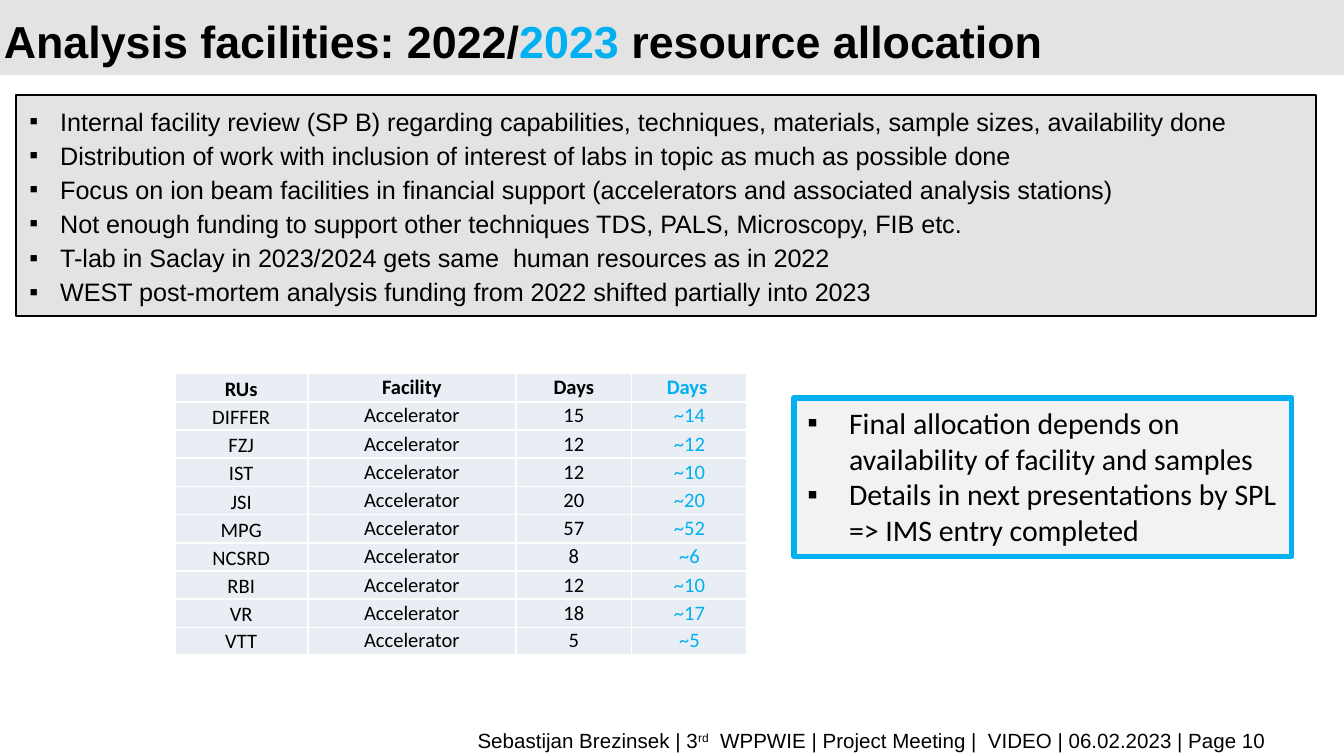
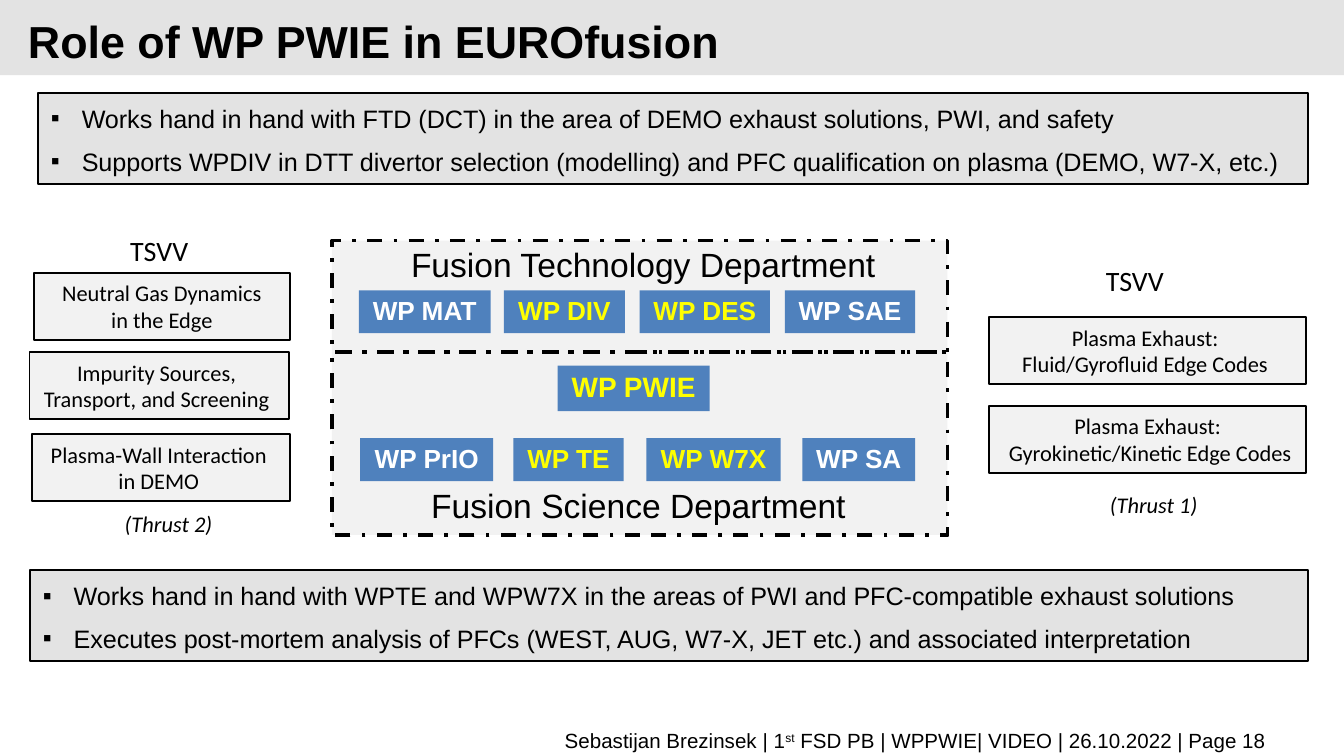
from dataclasses import dataclass
from lxml.etree import SubElement as Sub
from pptx import Presentation
from pptx.dml.color import RGBColor as RGB
from pptx.enum.dml import MSO_LINE as Dash
from pptx.enum.shapes import MSO_SHAPE as Kind
from pptx.enum.text import MSO_ANCHOR as Anchor, MSO_AUTO_SIZE as Auto, PP_ALIGN as Align
from pptx.oxml.ns import qn
from pptx.util import Inches, Pt


@dataclass(frozen=True)
class Theme:
    black: str = "000000"
    white: str = "FFFFFF"
    band: str = "E3E3E3"
    pale: str = "F2F2F2"
    cell: str = "E9EDF4"
    cyan: str = "00B0F0"
    blue: str = "4F81BD"
    yellow: str = "FFFF00"
    sans: str = "Arial"
    body: str = "Calibri"
    title: float = 24
    dept: float = 18
    note: float = 16
    hub: float = 15
    chip: float = 14
    list: float = 13.5
    side: float = 12
    small: float = 11


T = Theme()
WIDE = 10
HIGH = WIDE * 9 / 16

FACTS = [
    "Internal facility review (SP B) regarding capabilities, techniques, materials, sample sizes, availability done",
    "Distribution of work with inclusion of interest of labs in topic as much as possible done",
    "Focus on ion beam facilities in financial support (accelerators and associated analysis stations)",
    "Not enough funding to support other techniques TDS, PALS, Microscopy, FIB etc.",
    "T-lab in Saclay in 2023/2024 gets same  human resources as in 2022",
    "WEST post-mortem analysis funding from 2022 shifted partially into 2023",
]
NOTES = [
    "Final allocation depends on availability of facility and samples",
    "Details in next presentations by SPL => IMS entry completed",
]
HEAD = ("RUs", "Facility", "Days", "Days ")
DAYS = [
    ("DIFFER", 15, 14), ("FZJ", 12, 12), ("IST", 12, 10),
    ("JSI", 20, 20), ("MPG", 57, 52), ("NCSRD", 8, 6),
    ("RBI", 12, 10), ("VR", 18, 17), ("VTT", 5, 5),
]
COLS = (0.99, 1.55, 0.86, 0.86)

LISTS = [
    ((0.28, 0.69, 9.45, 0.68), [
        "Works hand in hand with FTD (DCT) in the area of DEMO exhaust solutions, PWI, and safety",
        "Supports WPDIV in DTT divertor selection (modelling) and PFC qualification on plasma (DEMO, W7-X, etc.)",
    ]),
    ((0.22, 4.24, 9.51, 0.68), [
        "Works hand in hand with WPTE and WPW7X in the areas of PWI and PFC-compatible exhaust solutions",
        "Executes post-mortem analysis of PFCs (WEST, AUG, W7-X, JET etc.) and associated interpretation",
    ]),
]
LOWER = (2.47, 2.62, 4.58, 1.36)
UPPER = (2.47, 1.79, 4.58, 0.83)
DEPTS = [
    ("Fusion Technology Department", (2.96, 1.79, 3.69, 0.39)),
    ("Fusion Science Department", (3.11, 3.58, 3.32, 0.39)),
]
CHIPS = {
    2.16: [("WP MAT", 2.67, 0.98, T.white), ("WP DIV", 3.75, 0.9, T.yellow),
           ("WP DES", 4.76, 0.97, T.yellow), ("WP SAE", 5.84, 0.97, T.white)],
    3.26: [("WP PrIO", 2.68, 0.99, T.white), ("WP TE", 3.82, 0.82, T.yellow),
           ("WP W7X", 4.81, 1, T.yellow), ("WP SA", 5.97, 0.84, T.white)],
}
CODES = [
    ((0.25, 2.03, 1.91, 0.5), ["Neutral Gas Dynamics", " in the Edge "]),
    ((0.22, 2.62, 1.93, 0.5), ["Impurity Sources, ", "Transport, and Screening "]),
    ((0.24, 3.23, 1.92, 0.5), ["Plasma-Wall Interaction ", "in DEMO "]),
    ((7.36, 2.36, 2.36, 0.5), ["Plasma Exhaust: ", "Fluid/Gyrofluid Edge Codes "]),
    ((7.36, 3.02, 2.36, 0.5), ["Plasma Exhaust:", " Gyrokinetic/Kinetic Edge Codes "]),
]
HEADS = [(0.87, 1.71), (8.13, 1.93)]
THRUSTS = [("(Thrust 1)", 8.16, 3.62), ("(Thrust 2)", 0.83, 3.76)]


def font(size, name=T.sans, color=T.black, **more):
    return dict(size=Pt(size), name=name, color=color, **more)


def put(obj, vals):
    for key, val in vals.items():
        if key == "color":
            obj.color.rgb = RGB.from_string(val)
        else:
            setattr(obj, key, val)


def mark(par, ind):
    props = par._p.get_or_add_pPr()
    props.set("marL", str(Inches(ind)))
    props.set("indent", str(-Inches(ind)))
    Sub(props, qn("a:buFont")).set("typeface", T.sans)
    Sub(props, qn("a:buChar")).set("char", "▪")


def write(frame, pars, fmt, para=None, ind=0, **box):
    put(frame, dict(word_wrap=True, vertical_anchor=Anchor.TOP) | box)
    for num, runs in enumerate(pars):
        par = frame.add_paragraph() if num else frame.paragraphs[0]
        if ind:
            mark(par, ind)
        put(par, dict(alignment=Align.LEFT) | (para or {}))
        for text, more in [(runs, {})] if isinstance(runs, str) else runs:
            run = par.add_run()
            run.text = text
            more = dict(more)
            base = more.pop("base", None)
            put(run.font, fmt | more)
            if base:
                run._r.get_or_add_rPr().set("baseline", str(base * 1000))


def rect(slide, at, fill=None, line=None, width=1, dash=None):
    box = slide.shapes.add_shape(Kind.RECTANGLE, *map(Inches, at))
    box.shadow.inherit = False
    if fill:
        box.fill.solid()
        box.fill.fore_color.rgb = RGB.from_string(fill)
    else:
        box.fill.background()
    if line:
        put(box.line, dict(color=line, width=Pt(width)))
        if dash:
            box.line.dash_style = dash
    else:
        box.line.fill.background()
    return box.text_frame


def label(slide, at, pars, fmt, para=None, **box):
    frame = slide.shapes.add_textbox(*map(Inches, at)).text_frame
    write(frame, pars, fmt, para, **box)


GROW = dict(auto_size=Auto.SHAPE_TO_FIT_TEXT)
FREE = GROW | dict(word_wrap=False)
TIGHT = dict(line_spacing=0.95)
MID = dict(alignment=Align.CENTER)


def start(deck, at, title, foot):
    slide = deck.slides.add_slide(deck.slide_layouts[6])
    rect(slide, (0, 0, WIDE, 0.56), T.band)
    label(slide, at, [title], font(T.title, bold=True),
          dict(line_spacing=Pt(32)), vertical_anchor=Anchor.MIDDLE)
    head, sup, tail = foot
    label(slide, (0.51, 5.37, 9.01, 0.22),
          [[(head, {}), (sup, {"base": 30}), (tail, {})]],
          font(T.small), dict(alignment=Align.RIGHT))
    return slide


def panel(slide, at, items, **gap):
    write(rect(slide, at, T.band, T.black), items, font(T.list),
          dict(line_spacing=1.13) | gap, 0.23, **GROW)


def edge(cell):
    props = cell._tc.get_or_add_tcPr()
    for num, side in enumerate(("lnL", "lnR", "lnT", "lnB")):
        line = props.makeelement(qn(f"a:{side}"), {"w": str(Pt(1))})
        Sub(Sub(line, qn("a:solidFill")), qn("a:srgbClr")).set("val", T.white)
        props.insert(num, line)


def grid(slide):
    rows = [HEAD] + [(lab, "Accelerator", str(old), f"~{new}") for lab, old, new in DAYS]
    at = map(Inches, (1.3, 2.78, sum(COLS), 2.08))
    table = slide.shapes.add_table(len(rows), len(COLS), *at).table
    put(table, dict(first_row=False, horz_banding=False))
    for col, width in zip(table.columns, COLS):
        col.width = Inches(width)
    pad = {f"margin_{side}": 0 for side in ("left", "right", "top", "bottom")}
    for r, row in enumerate(rows):
        table.rows[r].height = Inches(0.21 if r < len(rows) - 1 else 0.2)
        for c, text in enumerate(row):
            cell = table.cell(r, c)
            put(cell, pad | dict(vertical_anchor=Anchor.MIDDLE if c else Anchor.BOTTOM))
            cell.fill.solid()
            cell.fill.fore_color.rgb = RGB.from_string(T.cell)
            edge(cell)
            par = cell.text_frame.paragraphs[0]
            put(par, MID)
            run = par.add_run()
            run.text = text
            put(run.font, font(T.small, T.body, T.cyan if c == 3 else T.black, bold=r == 0))


def plan(deck):
    title = [("Analysis facilities: 2022/", {}), ("2023 ", {"color": T.cyan}),
             ("resource allocation", {})]
    foot = ("Sebastijan Brezinsek | 3", "rd",
            "  WPPWIE | Project Meeting |  VIDEO | 06.02.2023 | Page 10")
    slide = start(deck, (-0.07, 0.09, 8.77, 0.38), title, foot)
    panel(slide, (0.12, 0.71, 9.67, 1.64), FACTS)
    grid(slide)
    write(rect(slide, (5.91, 2.96, 3.7, 1.18), T.pale, T.cyan, 3),
          NOTES, font(T.note, T.body), ind=0.31, **GROW)


def chip(slide, at, text, size, color, anchor=Anchor.TOP):
    write(rect(slide, at, T.blue), [text], font(size, color=color, bold=True),
          MID | TIGHT, vertical_anchor=anchor, **FREE)


def role(deck):
    foot = ("Sebastijan Brezinsek | 1", "st",
            " FSD PB | WPPWIE| VIDEO | 26.10.2022 | Page 18")
    slide = start(deck, (0.11, 0.09, 9.53, 0.38), "Role of WP PWIE in EUROfusion", foot)
    for at, fill in ((LOWER, T.pale), (UPPER, T.pale), (LOWER, None)):
        rect(slide, at, fill, T.black, 2, Dash.DASH_DOT)
    chip(slide, (4.15, 2.72, 1.13, 0.34), "WP PWIE", T.hub, T.yellow)
    for top, row in CHIPS.items():
        for text, left, width, color in row:
            chip(slide, (left, top, width, 0.32), text, T.chip, color, Anchor.MIDDLE)
    for text, at in DEPTS:
        label(slide, at, [text], font(T.dept), TIGHT, **FREE)
    for at, lines in CODES:
        write(rect(slide, at, T.pale, T.black), lines, font(T.side, T.body), MID, **GROW)
    for left, top in HEADS:
        label(slide, (left, top, 0.64, 0.34), ["TSVV"], font(T.hub, T.body), TIGHT, **FREE)
    for text, left, top in THRUSTS:
        label(slide, (left, top, 0.86, 0.29), [text],
              font(T.side, T.body, italic=True), TIGHT, **FREE)
    for at, items in LISTS:
        panel(slide, at, items, space_after=Pt(4.5))


def main():
    deck = Presentation()
    put(deck, dict(slide_width=Inches(WIDE), slide_height=Inches(HIGH)))
    plan(deck)
    role(deck)
    deck.save("out.pptx")


if __name__ == "__main__":
    main()
